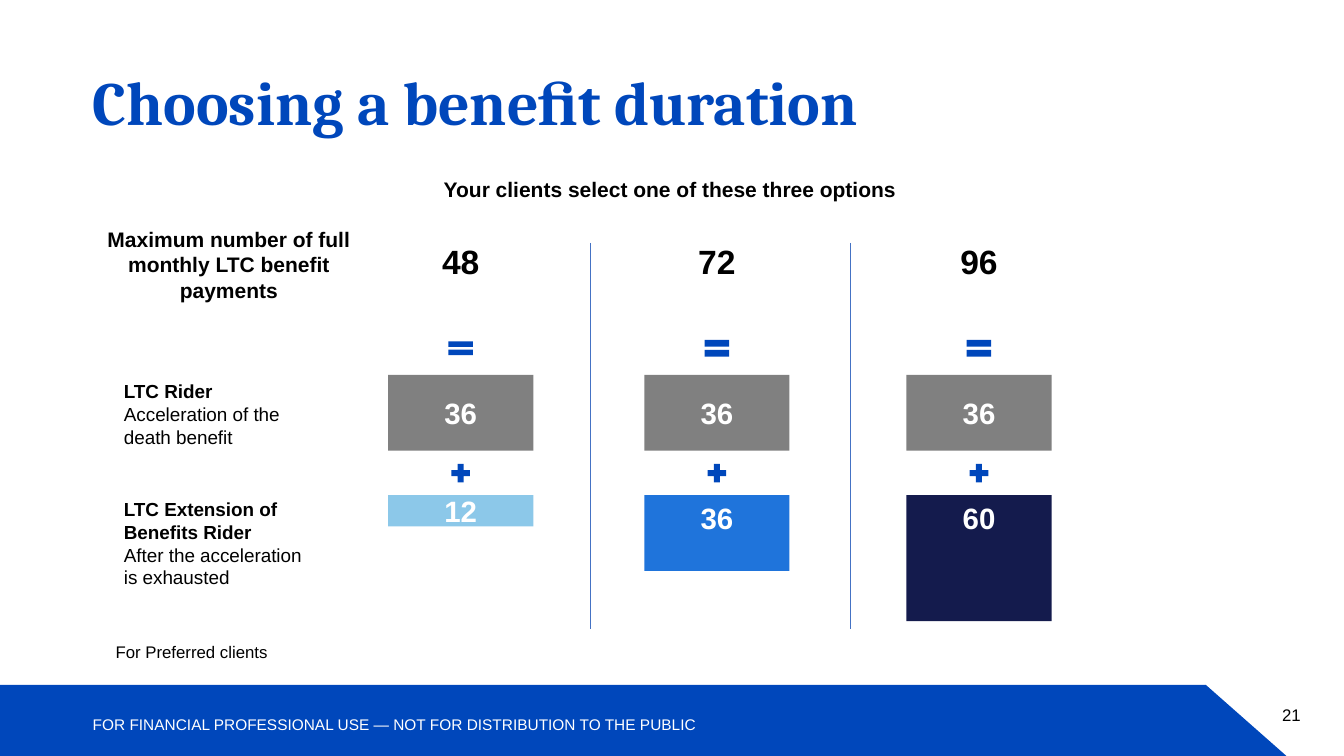
import pptx
import pptx.dml.color
import pptx.enum.shapes
import pptx.enum.text
import pptx.oxml.ns
import pptx.util
from lxml import etree

RGBColor = pptx.dml.color.RGBColor
Shape = pptx.enum.shapes.MSO_SHAPE
Align = pptx.enum.text.PP_ALIGN
Anchor = pptx.enum.text.MSO_ANCHOR

BLUE = RGBColor(0x00, 0x47, 0xBB)
MID_BLUE = RGBColor(0x1F, 0x74, 0xDB)
LIGHT_BLUE = RGBColor(0x8C, 0xC8, 0xE9)
NAVY = RGBColor(0x14, 0x1B, 0x4D)
RULE_BLUE = RGBColor(0x44, 0x72, 0xC4)
GREY = RGBColor(0x80, 0x80, 0x80)
BLACK = RGBColor(0x00, 0x00, 0x00)
WHITE = RGBColor(0xFF, 0xFF, 0xFF)


class SlideBuilder:
    body_font = "Arial"
    title_font = "Cambria"
    grid_steps = 100

    def __init__(self, deck):
        self.column = deck.slide_width / self.grid_steps
        self.row = deck.slide_height / self.grid_steps
        self.page = deck.slides.add_slide(deck.slide_layouts[5])

    def place(self, left, top, width, height):
        return (round(left * self.column), round(top * self.row),
                round(width * self.column), round(height * self.row))

    def fill_text(self, box, lines, size, color=BLACK, align=Align.LEFT,
                  anchor=Anchor.TOP, inset=True, spacing=None, font=body_font):
        frame = box.text_frame
        frame.word_wrap = True
        frame.auto_size = pptx.enum.text.MSO_AUTO_SIZE.NONE
        frame.vertical_anchor = anchor
        if not inset:
            frame.margin_left = frame.margin_right = 0
            frame.margin_top = frame.margin_bottom = 0
        for index, (words, bold) in enumerate(lines):
            para = frame.add_paragraph() if index else frame.paragraphs[0]
            para.alignment = align
            if spacing:
                para.line_spacing = spacing
            span = para.add_run()
            span.text = words
            span.font.name = font
            span.font.size = pptx.util.Pt(size)
            span.font.bold = bold
            span.font.color.rgb = color

    def title(self, area, words):
        box = self.page.shapes.title
        box.left, box.top, box.width, box.height = self.place(*area)
        self.fill_text(box, [(words, True)], 44, BLUE, inset=False,
                       spacing=0.9, font=self.title_font)

    def text(self, area, lines, size, **style):
        box = self.page.shapes.add_textbox(*self.place(*area))
        self.fill_text(box, lines, size, **style)

    def shape(self, kind, area, fill):
        box = self.page.shapes.add_shape(kind, *self.place(*area))
        box.shadow.inherit = False
        box.fill.solid()
        box.fill.fore_color.rgb = fill
        box.line.fill.background()
        return box

    def block(self, area, fill, value, anchor=Anchor.MIDDLE):
        box = self.shape(Shape.RECTANGLE, area, fill)
        self.fill_text(box, [(str(value), True)], 21, WHITE, Align.CENTER, anchor)

    def divider(self, across, top, bottom):
        left, start, _, _ = self.place(across, top, 0, 0)
        end = round(bottom * self.row)
        line = self.page.shapes.add_connector(
            pptx.enum.shapes.MSO_CONNECTOR.STRAIGHT, left, start, left, end)
        line.line.color.rgb = RULE_BLUE
        line.line.width = pptx.util.Pt(0.5)
        etree.SubElement(line._element.spPr, pptx.oxml.ns.qn("a:effectLst"))


def add_frame(slide):
    slide.text((90.77, 92.67, 6.75, 3.87), [("21", False)], 12,
               align=Align.RIGHT, anchor=Anchor.MIDDLE)
    slide.title((6.9, 9.6, 66.17, 8.93), "Choosing a beneﬁt duration")
    slide.shape(Shape.RECTANGLE, (0, 90.6, 89.72, 9.4), BLUE)
    slide.shape(Shape.RIGHT_TRIANGLE, (89.72, 90.6, 6, 9.4), BLUE)
    slide.text((6.9, 94.53, 71.34, 2.53),
               [("FOR FINANCIAL PROFESSIONAL USE — NOT FOR DISTRIBUTION TO THE PUBLIC", False)],
               11, color=WHITE, inset=False)


def add_labels(slide):
    slide.text((28.88, 22.67, 41.94, 4.67),
               [("Your clients select one of these three options", True)],
               15, align=Align.CENTER)
    slide.text((7.13, 29.33, 19.8, 11.47),
               [("Maximum number of full monthly LTC benefit payments", True)],
               15, align=Align.CENTER)
    slide.text((8.48, 49.6, 16.43, 10.4),
               [("LTC Rider", True),
                ("Acceleration of the death benefit", False)], 13.5)
    slide.text((8.48, 65.2, 14.93, 13.47),
               [("LTC Extension of Benefits Rider", True),
                ("After the acceleration is exhausted", False)], 13.5)
    slide.text((8.6, 84.53, 36.68, 5.33),
               [("For Preferred clients", False)], 12, inset=False, spacing=1.12)


def add_option(slide, left, extension, fill, equal_height, anchor):
    rider = 36
    block_width = 10.8
    rider_height = 10
    center = left + block_width / 2
    extension_height = max(extension * rider_height / rider, 4.13)
    slide.text((center - 4, 31.2, 8, 6.67), [(str(rider + extension), True)],
               24, align=Align.CENTER)
    slide.shape(Shape.MATH_EQUAL,
                (center - 1.24, 46.07 - equal_height / 2, 2.48, equal_height), BLUE)
    slide.block((left, 49.6, block_width, rider_height), GREY, rider)
    slide.shape(Shape.MATH_PLUS, (center - 0.94, 60.93, 1.88, 3.33), BLUE)
    slide.block((left, 65.5, block_width, extension_height), fill, extension, anchor)


def main():
    deck = pptx.Presentation()
    deck.slide_width = pptx.util.Inches(13.33)
    deck.slide_height = pptx.util.Inches(7.5)
    slide = SlideBuilder(deck)
    add_frame(slide)
    add_labels(slide)
    options = [(28.88, 12, LIGHT_BLUE, 3.07, Anchor.MIDDLE),
               (47.94, 36, MID_BLUE, 3.73, Anchor.TOP),
               (67.44, 60, NAVY, 3.73, Anchor.TOP)]
    for option in options:
        add_option(slide, *option)
    for across in (43.89, 63.24):
        slide.divider(across, 32.13, 83.2)
    deck.save("out.pptx")


if __name__ == "__main__":
    main()
